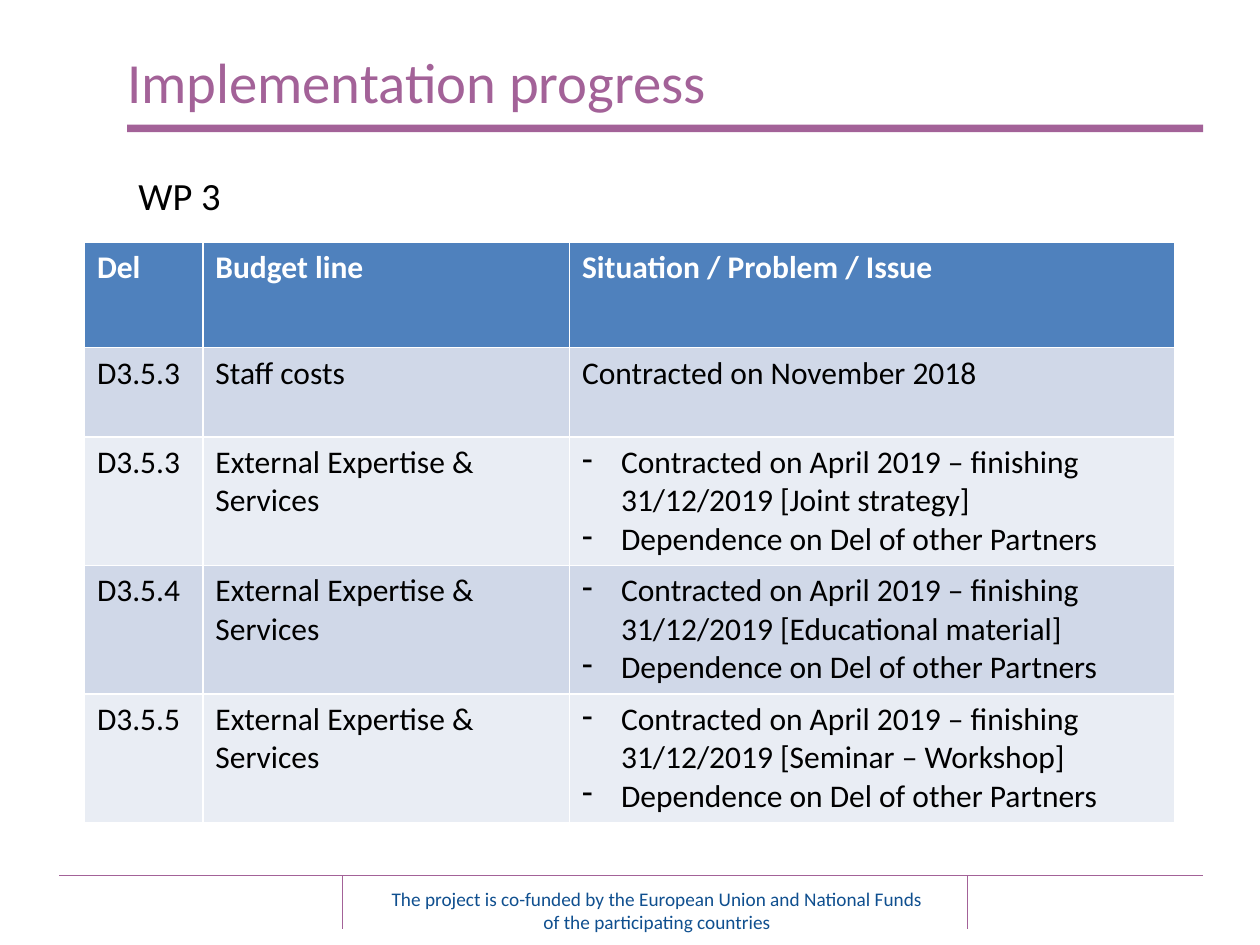
"""Build the implementation progress slide for WP 3."""
from copy import deepcopy

from lxml import etree
from pptx import Presentation
from pptx.dml.color import RGBColor
from pptx.enum.shapes import MSO_CONNECTOR, MSO_SHAPE
from pptx.enum.text import MSO_ANCHOR, PP_ALIGN
from pptx.oxml.ns import qn
from pptx.util import Inches, Pt

STRAIGHT = MSO_CONNECTOR.STRAIGHT
RECTANGLE = MSO_SHAPE.RECTANGLE
TOP, MIDDLE = MSO_ANCHOR.TOP, MSO_ANCHOR.MIDDLE
LEFT, CENTER = PP_ALIGN.LEFT, PP_ALIGN.CENTER

PURPLE = RGBColor(0xA3, 0x62, 0x98)
NAVY = RGBColor(0x0F, 0x4F, 0x8F)
BLACK = RGBColor(0x00, 0x00, 0x00)
WHITE = RGBColor(0xFF, 0xFF, 0xFF)
HEADER_BLUE = RGBColor(0x4F, 0x81, 0xBD)
DARK_BAND = RGBColor(0xD0, 0xD8, 0xE8)
LIGHT_BAND = RGBColor(0xE9, 0xED, 0xF4)


def write(para, text, size=18, color=BLACK, bold=False, align=LEFT, dash=False):
    if dash:
        properties = para._p.get_or_add_pPr()
        properties.set("marL", str(Inches(0.31)))
        properties.set("indent", str(Inches(-0.31)))
        etree.SubElement(properties, qn("a:buChar"), char="-")
    para.text = text
    para.alignment = align
    for span in para.runs:
        span.font.name = "Calibri"
        span.font.size = Pt(size)
        span.font.bold = bold
        span.font.color.rgb = color
    for line_break in para._p.findall(qn("a:br")):
        line_break.append(deepcopy(para.runs[0]._r.rPr))


deck = Presentation()
deck.slide_width = Inches(10)
deck.slide_height = Inches(7.5)
page = deck.slides.add_slide(deck.slide_layouts[6])

footer_lines = [
    (0.47, 6.95, 9.55, 6.95),
    (2.72, 6.95, 2.72, 7.37),
    (7.68, 6.95, 7.68, 7.37),
]
for ends in footer_lines:
    line = page.shapes.add_connector(STRAIGHT, *map(Inches, ends))
    line.line.color.rgb = PURPLE
    line.line.width = Pt(0.75)
    etree.SubElement(line._element.spPr, qn("a:effectLst"))

title_bar = page.shapes.add_shape(
    RECTANGLE, Inches(1.01), Inches(0.99), Inches(8.54), Inches(0.06)
)
title_bar.shadow.inherit = False
title_bar.fill.solid()
title_bar.fill.fore_color.rgb = PURPLE
title_bar.line.fill.background()

footer = (
    "The project is co-funded by the European Union and National Funds\n"
    "of the participating countries"
)
texts = [
    ((0.91, 0.3, 8.59, 0.69), MIDDLE, "Implementation progress",
     {"size": 32.4, "color": PURPLE}),
    ((1, 1.32, 8.5, 0.5), TOP, "WP 3", {"size": 22}),
    ((2.75, 6.99, 4.93, 0.47), TOP, footer,
     {"size": 11, "color": NAVY, "align": CENTER}),
]
for position, anchor, text, style in texts:
    box = page.shapes.add_textbox(*map(Inches, position))
    box.text_frame.word_wrap = True
    box.text_frame.vertical_anchor = anchor
    write(box.text_frame.paragraphs[0], text, **style)

external = "External Expertise & Services"
contracted = "Contracted on April 2019 – finishing 31/12/2019 [{}]"
dependence = "Dependence on Del of other Partners"
rows = [
    ("Del", "Budget line", ["Situation / Problem / Issue"]),
    ("D3.5.3", "Staff costs", ["Contracted on November 2018"]),
]
for deliverable, output in [
    ("D3.5.3", "Joint strategy"),
    ("D3.5.4", "Educational material"),
    ("D3.5.5", "Seminar – Workshop"),
]:
    rows.append((deliverable, external, [contracted.format(output), dependence]))

column_widths = [0.94, 2.91, 4.8]
row_heights = [0.84, 0.71, 1.02, 1.02, 1.02]
table = page.shapes.add_table(
    len(rows), len(column_widths), Inches(0.67), Inches(1.92),
    Inches(sum(column_widths)), Inches(sum(row_heights)),
).table
for column, width in zip(table.columns, column_widths):
    column.width = Inches(width)

for row_index, (deliverable, budget_line, issues) in enumerate(rows):
    table.rows[row_index].height = Inches(row_heights[row_index])
    is_header = row_index == 0
    band = DARK_BAND if row_index % 2 else LIGHT_BAND
    for column_index, items in enumerate([[deliverable], [budget_line], issues]):
        cell = table.cell(row_index, column_index)
        cell.fill.solid()
        cell.fill.fore_color.rgb = HEADER_BLUE if is_header else band
        for item_index, item in enumerate(items):
            frame = cell.text_frame
            para = frame.add_paragraph() if item_index else frame.paragraphs[0]
            write(para, item, color=WHITE if is_header else BLACK,
                  bold=is_header, dash=len(items) > 1)

deck.save("out.pptx")
